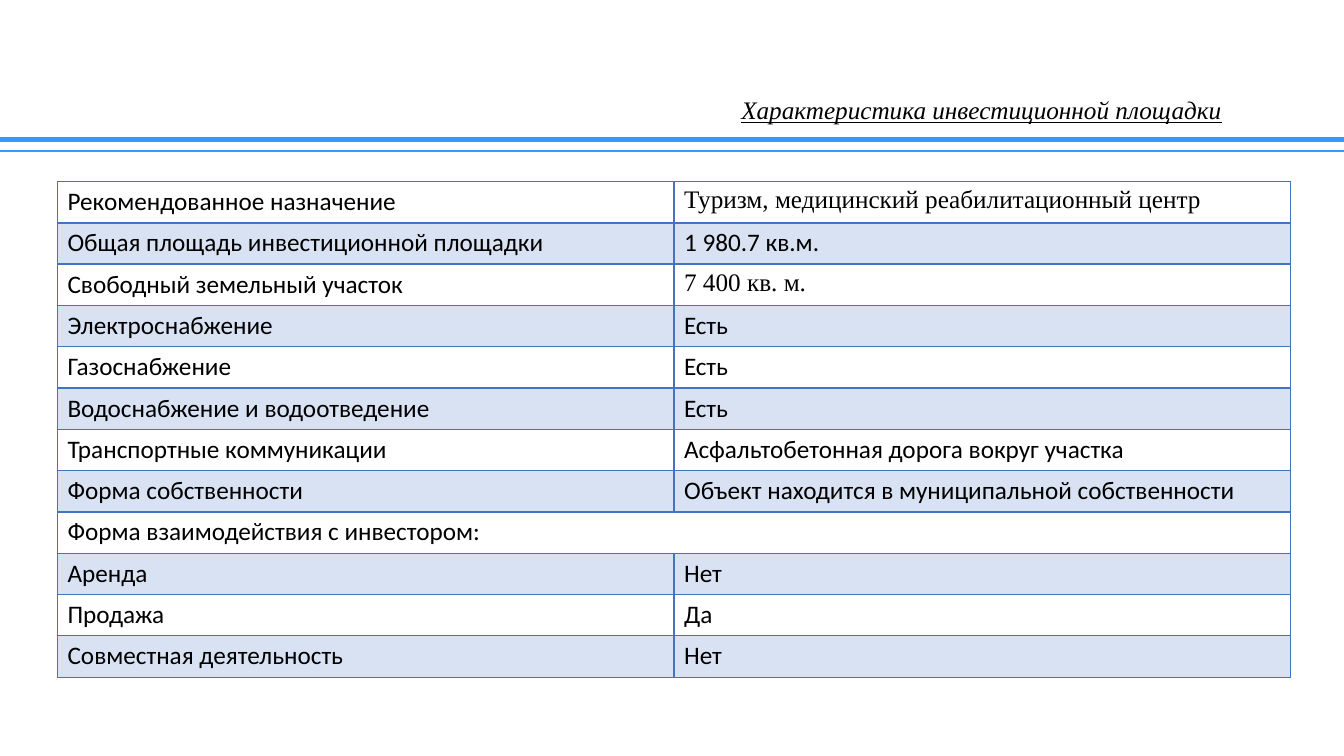
from lxml.etree import SubElement
from pptx import Presentation
from pptx.dml.color import RGBColor
from pptx.enum.text import MSO_ANCHOR, PP_ALIGN
from pptx.enum.shapes import MSO_CONNECTOR
from pptx.oxml.ns import qn
from pptx.util import Inches, Pt

BLACK = RGBColor(0x00, 0x00, 0x00)
RULE_BLUE = RGBColor(0x33, 0x99, 0xFF)
TABLE_BLUE = RGBColor(0x44, 0x72, 0xC4)
SERIF = "Times New Roman"
SANS = "Calibri"

SLIDE_WIDTH = 13.33
ROW_HEIGHT = 0.41
COLUMN_WIDTH = 6.115

# Label, value and font of the value; no value means a row across both columns
SITE_ROWS = [
    ("Рекомендованное назначение", "Туризм, медицинский реабилитационный центр", SERIF),
    ("Общая площадь инвестиционной площадки", "1 980.7 кв.м.", SANS),
    ("Свободный земельный участок", "7 400 кв. м.", SERIF),
    ("Электроснабжение", "Есть", SANS),
    ("Газоснабжение", "Есть", SANS),
    ("Водоснабжение и водоотведение", "Есть", SANS),
    ("Транспортные коммуникации", "Асфальтобетонная дорога вокруг участка", SANS),
    ("Форма собственности", "Объект находится в муниципальной собственности", SANS),
    ("Форма взаимодействия с инвестором:", None, SANS),
    ("Аренда", "Нет", SANS),
    ("Продажа", "Да", SANS),
    ("Совместная деятельность", "Нет", SANS),
]


def write_text(text_frame, text, font=SANS, size=18, color=BLACK, italic=False,
               underline=False, align=PP_ALIGN.LEFT, line_spacing=1.0):
    paragraph = text_frame.paragraphs[0]
    paragraph.alignment = align
    paragraph.line_spacing = line_spacing
    run = paragraph.add_run()
    run.text = text
    run.font.name = font
    run.font.size = Pt(size)
    run.font.color.rgb = color
    run.font.italic = italic
    run.font.underline = underline


class SlideBuilder:
    def __init__(self, slide, border_color=TABLE_BLUE, rule_color=RULE_BLUE):
        self.slide = slide
        self.border_color = border_color
        self.rule_color = rule_color

    def rule(self, top, width):
        line = self.slide.shapes.add_connector(
            MSO_CONNECTOR.STRAIGHT, Inches(0), Inches(top), Inches(SLIDE_WIDTH), Inches(top))
        line.line.color.rgb = self.rule_color
        line.line.width = Pt(width)
        SubElement(line._element.spPr, qn("a:effectLst"))

    def title(self, text, left, top, width, height):
        box = self.slide.shapes.add_textbox(
            Inches(left), Inches(top), Inches(width), Inches(height))
        box.text_frame.word_wrap = True
        box.text_frame.vertical_anchor = MSO_ANCHOR.MIDDLE
        write_text(box.text_frame, text, font=SERIF, italic=True, underline=True,
                   align=PP_ALIGN.CENTER, line_spacing=0.9)

    def style_cell(self, cell, shaded, top_width, bottom_width):
        properties = cell._tc.get_or_add_tcPr()
        # Borders come before the fill in the cell properties
        for side, width in (("L", 1), ("R", 1), ("T", top_width), ("B", bottom_width)):
            border = SubElement(properties, qn(f"a:ln{side}"), w=str(Pt(width)))
            solid = SubElement(border, qn("a:solidFill"))
            SubElement(solid, qn("a:srgbClr"), val=str(self.border_color))
        if shaded:
            cell.fill.solid()
            cell.fill.fore_color.rgb = self.border_color
            fill_color = properties.find(qn("a:solidFill")).find(qn("a:srgbClr"))
            SubElement(fill_color, qn("a:alpha"), val="20000")
        else:
            cell.fill.background()

    def table(self, rows, left, top):
        frame = self.slide.shapes.add_table(
            len(rows), 2, Inches(left), Inches(top),
            Inches(2 * COLUMN_WIDTH), Inches(len(rows) * ROW_HEIGHT))
        table = frame.table
        table.first_row = False
        table.horz_banding = False
        for column in table.columns:
            column.width = Inches(COLUMN_WIDTH)
        for index, (label, value, value_font) in enumerate(rows):
            table.rows[index].height = Inches(ROW_HEIGHT)
            label_cell, value_cell = table.cell(index, 0), table.cell(index, 1)
            for cell in (label_cell, value_cell):
                # The first row is set off by a heavier line
                self.style_cell(cell, shaded=index % 2 == 1,
                                top_width=2 if index == 1 else 1,
                                bottom_width=2 if index == 0 else 1)
            write_text(label_cell.text_frame, label)
            if value is None:
                label_cell.merge(value_cell)
            else:
                write_text(value_cell.text_frame, value, font=value_font)


def main():
    presentation = Presentation()
    presentation.slide_width = Inches(SLIDE_WIDTH)
    presentation.slide_height = Inches(7.5)
    builder = SlideBuilder(presentation.slides.add_slide(presentation.slide_layouts[6]))

    # Heading with its double rule
    builder.rule(1.38, 3.5)
    builder.rule(1.5, 1.5)
    builder.title("Характеристика инвестиционной площадки", 6.67, 0.97, 6.13, 0.27)

    # Site characteristics
    builder.table(SITE_ROWS, 0.57, 1.8)

    presentation.save("out.pptx")


if __name__ == "__main__":
    main()
